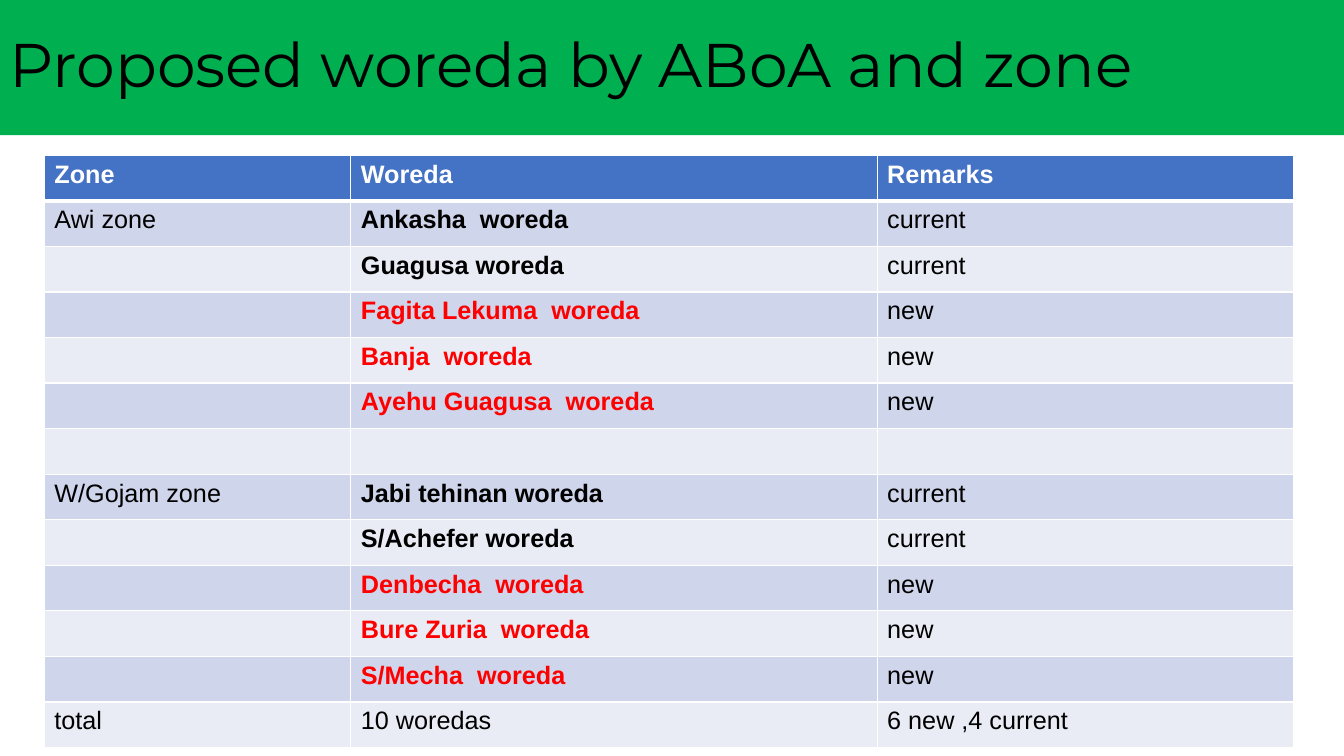
from lxml.etree import SubElement
from pptx import Presentation
from pptx.dml.color import RGBColor
from pptx.enum.shapes import MSO_SHAPE
from pptx.enum.text import MSO_ANCHOR, PP_ALIGN
from pptx.oxml.ns import qn
from pptx.util import Inches, Pt

WIDTH, HEIGHT = Inches(13.33), Inches(7.5)
COLORS = {
    "banner": "00B050",
    "header": "4472C4",
    "band_dark": "CFD5EA",
    "band_light": "E9EBF5",
    "white": "FFFFFF",
    "black": "000000",
    "new": "FF0000",
}
COLUMN_WIDTHS = [3.04, 5.22, 4.13]
ROWS = [
    ("Zone", "Woreda", "Remarks"),
    ("Awi zone", "Ankasha  woreda", "current"),
    ("", "Guagusa woreda", "current"),
    ("", "Fagita Lekuma  woreda", "new"),
    ("", "Banja  woreda", "new"),
    ("", "Ayehu Guagusa  woreda", "new"),
    ("", "", ""),
    ("W/Gojam zone", "Jabi tehinan woreda", "current"),
    ("", "S/Achefer woreda", "current"),
    ("", "Denbecha  woreda", "new"),
    ("", "Bure Zuria  woreda", "new"),
    ("", "S/Mecha  woreda", "new"),
    ("total", "10 woredas", "6 new ,4 current"),
]


def color(name):
    return RGBColor.from_string(COLORS[name])


def add_span(para, text, font, size, color_name, bold=False):
    span = para.add_run()
    span.text = text
    span.font.name = font
    span.font.size = Pt(size)
    span.font.bold = bold
    span.font.color.rgb = color(color_name)


def add_border(cell, side, points):
    properties = cell._tc.get_or_add_tcPr()
    line = SubElement(properties, qn(f"a:ln{side}"), w=str(Pt(points)))
    fill = SubElement(line, qn("a:solidFill"))
    SubElement(fill, qn("a:srgbClr"), val=COLORS["white"])


def add_banner(page, left, top, width, height):
    box = page.shapes.add_shape(MSO_SHAPE.RECTANGLE, left, top, width, height)
    box.shadow.inherit = False
    box.fill.solid()
    box.fill.fore_color.rgb = color("banner")
    box.line.fill.background()
    frame = box.text_frame
    frame.word_wrap = True
    frame.vertical_anchor = MSO_ANCHOR.MIDDLE
    para = frame.paragraphs[0]
    para.alignment = PP_ALIGN.LEFT
    para.line_spacing = 0.9
    add_span(para, "Proposed woreda by ABoA and zone", "Montserrat", 44, "black")


def text_style(row, column):
    if row == 0:
        return "white", True
    remark = ROWS[row][2]
    if column == 1 and remark in ("current", "new"):
        return ("new" if remark == "new" else "black"), True
    return "black", False


def fill_cell(cell, row, column):
    for side in "LRTB":
        under_header = (row, side) in ((0, "B"), (1, "T"))
        add_border(cell, side, 3 if under_header else 1)
    band = "band_dark" if row % 2 else "band_light"
    cell.fill.solid()
    cell.fill.fore_color.rgb = color("header" if row == 0 else band)
    para = cell.text_frame.paragraphs[0]
    para.font.size = Pt(18)
    text = ROWS[row][column]
    if text:
        add_span(para, text, "Arial", 18, *text_style(row, column))


def add_woreda_table(page, left, top, width, height):
    frame = page.shapes.add_table(
        len(ROWS), len(COLUMN_WIDTHS), left, top, width, height
    )
    table = frame.table
    for column, share in zip(table.columns, COLUMN_WIDTHS):
        column.width = int(width * share / sum(COLUMN_WIDTHS))
    for row in range(len(ROWS)):
        for column in range(len(COLUMN_WIDTHS)):
            fill_cell(table.cell(row, column), row, column)


def main():
    deck = Presentation()
    deck.slide_width, deck.slide_height = WIDTH, HEIGHT
    page = deck.slides.add_slide(deck.slide_layouts[6])
    add_banner(page, 0, 0, WIDTH, Inches(1.34))
    add_woreda_table(page, Inches(0.44), Inches(1.54), Inches(12.39), Inches(5.88))
    deck.save("out.pptx")


if __name__ == "__main__":
    main()
